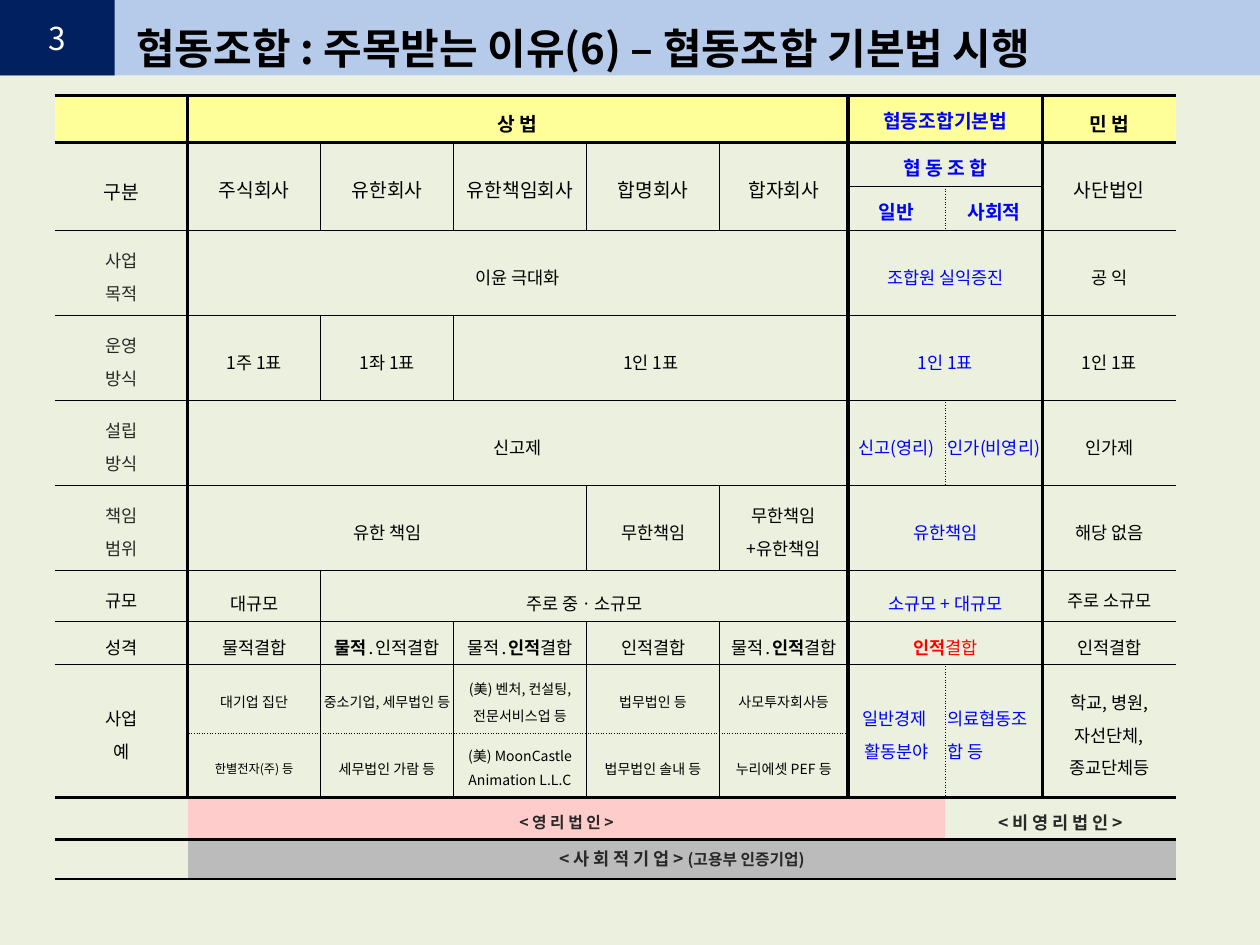
from lxml import etree
from pptx import Presentation
from pptx.dml.color import RGBColor
from pptx.enum.shapes import MSO_SHAPE
from pptx.enum.text import MSO_ANCHOR, PP_ALIGN
from pptx.oxml.ns import qn
from pptx.util import Pt

RECTANGLE = MSO_SHAPE.RECTANGLE
TOP, MIDDLE = MSO_ANCHOR.TOP, MSO_ANCHOR.MIDDLE
LEFT, CENTER = PP_ALIGN.LEFT, PP_ALIGN.CENTER

THEME = {
    "font": "Noto Sans CJK KR",
    "black": "000000", "gray": "282828", "white": "FFFFFF",
    "blue": "0000FF", "red": "FF0000",
    "band": "B6CAEA", "navy": "002060", "page": "EBF1DE",
    "yellow": "FFFF99", "pink": "FFCCCC", "silver": "BBBBBB",
    "title": 24, "number": 18, "header": 11, "body": 10,
    "label": 9, "small": 8, "tiny": 7,
}
THICK, CLOSING, MEDIUM, THIN = 1.98, 1.7, 0.56, 0.28

# Content
TITLE = "협동조합 : 주목받는 이유(6) – 협동조합 기본법 시행"
NUMBER = "3"
COLUMNS = [76] * 5 + [73.4, 55.6, 55.6, 76.2]
ROWS = [26.7, 25.1, 25.1] + [48.6] * 4 + [29.1, 24.6, 39.4, 36.6, 24, 22.9]
BOLD = {"bold": True}
LOOSE = {"spacing": 1.6}

# Each cell: column, rows spanned, columns spanned, text or spans, format
CELLS = [
    [(0, 1, 1, "", {}), (1, 1, 5, "상 법", {}),
     (6, 1, 2, "협동조합기본법", {"spacing": 1.1}), (8, 1, 1, "민 법", {})],
    [(0, 2, 1, "구분", {"spacing": 1.3}), (1, 2, 1, "주식회사", {}),
     (2, 2, 1, "유한회사", {}), (3, 2, 1, "유한책임회사", {}),
     (4, 2, 1, "합명회사", {}), (5, 2, 1, "합자회사", {}),
     (6, 1, 2, "협 동 조 합", {}), (8, 2, 1, "사단법인", {})],
    [(6, 1, 1, "일반", {}), (7, 1, 1, "사회적", {})],
    [(0, 1, 1, "사업\n목적", {}), (1, 1, 5, "이윤 극대화", {}),
     (6, 1, 2, "조합원 실익증진", {}), (8, 1, 1, "공 익", {})],
    [(0, 1, 1, "운영\n방식", {}), (1, 1, 1, "1주 1표", {}),
     (2, 1, 1, "1좌 1표", {}), (3, 1, 3, "1인 1표", {}),
     (6, 1, 2, "1인 1표", {}), (8, 1, 1, "1인 1표", {})],
    [(0, 1, 1, "설립\n방식", {}), (1, 1, 5, "신고제", {}),
     (6, 1, 1, "신고(영리)", {}), (7, 1, 1, "인가(비영리)", {}),
     (8, 1, 1, "인가제", {})],
    [(0, 1, 1, "책임\n범위", {}), (1, 1, 3, "유한 책임", {}),
     (4, 1, 1, "무한책임", {}), (5, 1, 1, "무한책임\n+유한책임", {}),
     (6, 1, 2, "유한책임", {}), (8, 1, 1, "해당 없음", {})],
    [(0, 1, 1, "규모", {}), (1, 1, 1, "대규모", LOOSE),
     (2, 1, 4, "주로 중ㆍ소규모", LOOSE),
     (6, 1, 2, "소규모 + 대규모", LOOSE), (8, 1, 1, "주로 소규모", {})],
    [(0, 1, 1, "성격", {}), (1, 1, 1, "물적결합", {}),
     (2, 1, 1, [("물적", BOLD), ("․인적결합", {})], {}),
     (3, 1, 1, [("물적․", {}), ("인적", BOLD), ("결합", {})], {}),
     (4, 1, 1, "인적결합", {}),
     (5, 1, 1, [("물적․", {}), ("인적", BOLD), ("결합", {})], {}),
     (6, 1, 2, [("인적", BOLD), ("결합", {})], {"color": "red"}),
     (8, 1, 1, "인적결합", {})],
    [(0, 2, 1, "사업\n예", {}), (1, 1, 1, "대기업 집단", {}),
     (2, 1, 1, "중소기업, 세무법인 등", {}),
     (3, 1, 1, "(美) 벤처, 컨설팅, 전문서비스업 등", {}),
     (4, 1, 1, "법무법인 등", {}), (5, 1, 1, "사모투자회사등", {}),
     (6, 2, 1, "일반경제 \n활동분야", {}),
     (7, 2, 1, "의료협동조합 등", {"align": LEFT}),
     (8, 2, 1, "학교, 병원, 자선단체, 종교단체등", {})],
    [(1, 1, 1, "한별전자(주) 등", {"size": "tiny"}),
     (2, 1, 1, "세무법인 가람 등", {}),
     (3, 1, 1, "(美) MoonCastle Animation L.L.C", {"spacing": 1.2}),
     (4, 1, 1, "법무법인 솔내 등", {}), (5, 1, 1, "누리에셋 PEF 등", {})],
    [(0, 1, 1, "", {}),
     (1, 1, 6, "< 영 리 법 인 >", {"size": "label", "fill": "pink"}),
     (7, 1, 2, "< 비 영 리 법 인 >", {})],
    [(0, 1, 1, "", {}),
     (1, 1, 8, [("< 사 회 적 기 업 > ", {}),
                ("(고용부 인증기업)", {"size": "label"})],
      {"spacing": 0.9, "fill": "silver"})],
]


def color_of(name):
    return RGBColor.from_string(THEME[name])


def write_text(frame, text, size="body", color="black", bold=False,
               align=CENTER, spacing=1.0, anchor=MIDDLE):
    """Write lines of text, or a list of spans with formats of their own."""
    frame.word_wrap = True
    frame.vertical_anchor = anchor
    lines = [[(line, {}) for line in [part]] for part in text.split("\n")] \
        if isinstance(text, str) else [text]
    for index, line in enumerate(lines):
        para = frame.add_paragraph() if index else frame.paragraphs[0]
        para.alignment = align
        para.line_spacing = spacing
        for words, change in line:
            if not words:  # keeps an empty cell from growing its row
                end = etree.SubElement(para._p, qn("a:endParaRPr"))
                end.set("sz", str(THEME[size] * 100))
                continue
            look = {"size": size, "color": color, "bold": bold, **change}
            span = para.add_run()
            span.text = words
            span.font.name = THEME["font"]
            span.font.size = Pt(THEME[look["size"]])
            span.font.bold = look["bold"]
            span.font.color.rgb = color_of(look["color"])
            asian = etree.SubElement(span.font._element, qn("a:ea"))
            asian.set("typeface", THEME["font"])


def add_block(page, left, top, width, height, fill):
    box = page.shapes.add_shape(RECTANGLE, Pt(left), Pt(top), Pt(width), Pt(height))
    box.shadow.inherit = False
    box.fill.solid()
    box.fill.fore_color.rgb = color_of(fill)
    box.line.fill.background()
    return box


def cell_format(row, column):
    """Format that follows from the place of a cell."""
    cooperative = column in (6, 7) and row < 11
    example = row in (9, 10) and 1 <= column <= 5
    label = row >= 11 or (column == 0 and 3 <= row <= 6)
    return {
        "size": "header" if row < 3 else "small" if example else "body",
        "color": "blue" if cooperative else "gray" if label else "black",
        "bold": row == 0 or row >= 11 or (row < 3 and cooperative),
        "spacing": 1.2 if row in (1, 2) else 1.3,
        "fill": "yellow" if row == 0 else None,
    }


def vertical_rule(row, edge):
    if edge in (0, len(COLUMNS)) or row >= 11:
        return None, False
    return (THICK if edge in (1, 6, 8) else THIN), edge == 7


def horizontal_rule(edge):
    special = {0: THICK, 1: THICK, 2: THIN, 3: THIN, 10: THIN,
               11: THICK, 12: THICK, 13: CLOSING}
    return special.get(edge, MEDIUM), edge == 10


def draw_border(cell, side, width, dotted):
    line = etree.SubElement(cell._tc.get_or_add_tcPr(), qn("a:" + side))
    if width is None:
        etree.SubElement(line, qn("a:noFill"))
        return
    line.set("w", str(int(Pt(width))))
    fill = etree.SubElement(line, qn("a:solidFill"))
    etree.SubElement(fill, qn("a:srgbClr")).set("val", THEME["black"])
    etree.SubElement(line, qn("a:prstDash")).set("val", "sysDot" if dotted else "solid")


def fill_cell(table, row, column, tall, wide, text, change):
    cell = table.cell(row, column)
    if tall * wide > 1:
        cell.merge(table.cell(row + tall - 1, column + wide - 1))
    cell.margin_left = cell.margin_right = Pt(1.4)
    cell.margin_top = cell.margin_bottom = Pt(1.4)
    look = {**cell_format(row, column), **change}
    fill = look.pop("fill")
    write_text(cell.text_frame, text, **look)
    cell.vertical_anchor = MIDDLE
    draw_border(cell, "lnL", *vertical_rule(row, column))
    draw_border(cell, "lnR", *vertical_rule(row, column + wide))
    draw_border(cell, "lnT", *horizontal_rule(row))
    draw_border(cell, "lnB", *horizontal_rule(row + tall))
    if fill:
        cell.fill.solid()
        cell.fill.fore_color.rgb = color_of(fill)
    else:
        cell.fill.background()


def main():
    deck = Presentation()
    deck.slide_width, deck.slide_height = Pt(720), Pt(540)
    page = deck.slides.add_slide(deck.slide_layouts[5])

    # Bands, section number and title
    add_block(page, 0, 0, 720, 43.2, "band")
    number = add_block(page, 0, 0, 65.5, 43.2, "navy")
    write_text(number.text_frame, NUMBER, size="number", color="white")
    add_block(page, 0, 43.2, 720, 496.8, "page")
    title = page.shapes.title
    title.left, title.top, title.width, title.height = Pt(70.6), Pt(9.4), Pt(623.5), Pt(36)
    write_text(title.text_frame, TITLE, size="title", bold=True, align=LEFT, anchor=TOP)
    page.shapes.element.append(title.element)  # in front of the bands

    # Comparison table
    table = page.shapes.add_table(len(ROWS), len(COLUMNS), Pt(31.2), Pt(54.7),
                                  Pt(sum(COLUMNS)), Pt(sum(ROWS))).table
    table.first_row = table.horz_banding = False
    for column, width in zip(table.columns, COLUMNS):
        column.width = Pt(width)
    for row, height in zip(table.rows, ROWS):
        row.height = Pt(height)
    for row, cells in enumerate(CELLS):
        for cell in cells:
            fill_cell(table, row, *cell)

    deck.save("out.pptx")


if __name__ == "__main__":
    main()
